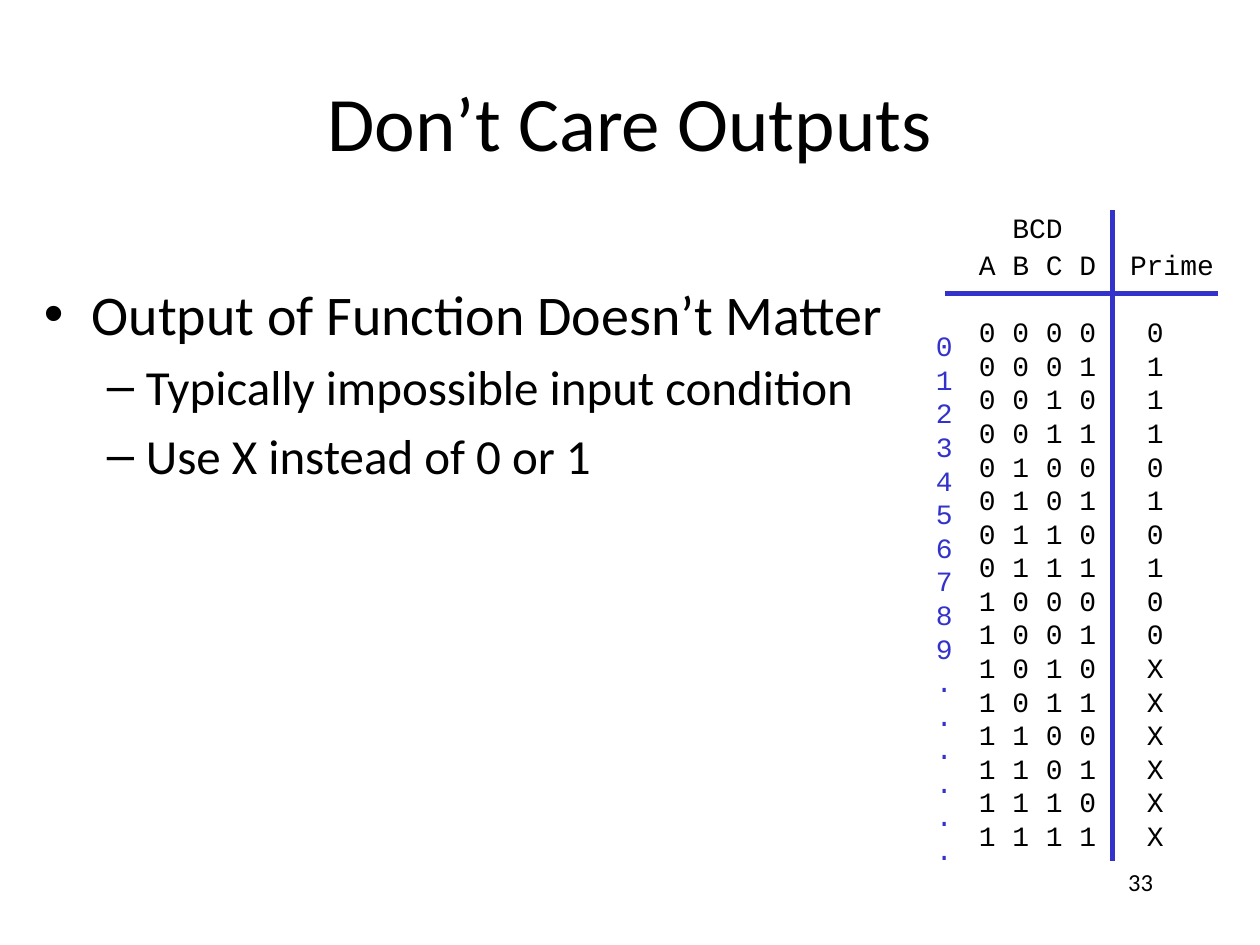
from lxml import etree
from pptx import Presentation
from pptx.dml.color import RGBColor
from pptx.enum.shapes import MSO_CONNECTOR
from pptx.enum.text import MSO_ANCHOR, PP_ALIGN
from pptx.oxml.ns import qn
from pptx.util import Inches, Pt

STRAIGHT = MSO_CONNECTOR.STRAIGHT
MIDDLE, TOP = MSO_ANCHOR.MIDDLE, MSO_ANCHOR.TOP
LEFT, CENTER, RIGHT = PP_ALIGN.LEFT, PP_ALIGN.CENTER, PP_ALIGN.RIGHT
BLACK, BLUE = "000000", "3333CC"

TITLE = "Don’t Care Outputs"
BULLETS = [
    ("Output of Function Doesn’t Matter", 0),
    ("Typically impossible input condition", 1),
    ("Use X instead of 0 or 1", 1),
]
BULLET_LEVELS = [
    {"symbol": "•", "size": 32, "margin": 0.38, "hanging": 0.38},
    {"symbol": "–", "size": 28, "margin": 0.81, "hanging": 0.31},
]
PRIME_OUTPUTS = "0111010100XXXXXX"
ROW_LABELS = "0123456789......"
SLIDE_NUMBER = "33"
RULES = [(8.83, 1.67, 8.83, 6.83), (7.5, 2.33, 9.67, 2.33)]

CHARACTER_WIDTH = 9.6 / 72
ROW_HEIGHT = 19.2
GROUP_COLUMN, HEADING_COLUMN, VALUE_COLUMN = 2, 9, 10
MONO = {"size": 16, "font": "Courier New", "line_spacing": Pt(ROW_HEIGHT)}


def color(value):
    return RGBColor.from_string(value)


def add_text_frame(slide, left, top, width, height, anchor=TOP, **margins):
    box = slide.shapes.add_textbox(Inches(left), Inches(top), Inches(width), Inches(height))
    frame = box.text_frame
    frame.word_wrap = True
    frame.vertical_anchor = anchor
    for name, margin in margins.items():
        setattr(frame, name, Inches(margin))
    return frame


def add_paragraph(frame, text, size, font="Calibri", fill=BLACK, **formats):
    first = frame.paragraphs[0]
    paragraph = frame.add_paragraph() if first.runs else first
    run = paragraph.add_run()
    run.text = text
    for name, value in {"name": font, "size": Pt(size)}.items():
        setattr(run.font, name, value)
    run.font.color.rgb = color(fill)
    for name, value in formats.items():
        setattr(paragraph, name, value)
    return paragraph


def set_bullet(paragraph, level):
    properties = paragraph._p.get_or_add_pPr()
    properties.set("marL", str(Inches(level["margin"])))
    properties.set("indent", str(-Inches(level["hanging"])))
    etree.SubElement(properties, qn("a:buFont"), typeface="Arial")
    etree.SubElement(properties, qn("a:buChar"), char=level["symbol"])


def set_tab(paragraph, column):
    tabs = etree.SubElement(paragraph._p.get_or_add_pPr(), qn("a:tabLst"))
    position = Inches(column * CHARACTER_WIDTH)
    etree.SubElement(tabs, qn("a:tab"), pos=str(position), algn="l")


def add_rule(slide, ends):
    rule = slide.shapes.add_connector(STRAIGHT, *[Inches(value) for value in ends])
    rule.line.color.rgb = color(BLUE)
    rule.line.width = Pt(3)
    etree.SubElement(rule._element.spPr, qn("a:effectLst"))


def add_truth_table(slide):
    frame = add_text_frame(slide, 7.67, 1.67, 2.92, 5.15, margin_top=0)
    rows = [("\tBCD", GROUP_COLUMN, 0), ("A B C D\tPrime", HEADING_COLUMN, 2)]
    for number, output in enumerate(PRIME_OUTPUTS):
        inputs = " ".join(f"{number:04b}")
        gap = 0 if number else ROW_HEIGHT
        rows.append((f"{inputs}\t{output}", VALUE_COLUMN, gap))
    for text, column, gap in rows:
        paragraph = add_paragraph(frame, text, alignment=LEFT, space_before=Pt(gap), **MONO)
        set_tab(paragraph, column)


def main():
    presentation = Presentation()
    presentation.slide_width = Inches(10)
    presentation.slide_height = Inches(7.5)
    slide = presentation.slides.add_slide(presentation.slide_layouts[6])

    title = add_text_frame(slide, 0.75, 0.33, 8.5, 1.25, anchor=MIDDLE)
    add_paragraph(title, TITLE, 44, alignment=CENTER)

    body = add_text_frame(slide, 0.25, 2.17, 8.5, 4.5)
    for text, depth in BULLETS:
        level = BULLET_LEVELS[depth]
        gap = Pt(level["size"] * 0.2)
        paragraph = add_paragraph(body, text, level["size"], level=depth, space_before=gap)
        set_bullet(paragraph, level)

    add_truth_table(slide)
    for ends in RULES:
        add_rule(slide, ends)

    labels = add_text_frame(slide, 7.33, 2, 0.33, 5.1, margin_top=0.61, margin_right=0)
    for label in ROW_LABELS:
        add_paragraph(labels, label, fill=BLUE, **MONO)

    footer = add_text_frame(slide, 7.17, 6.83, 2.08, 0.5)
    add_paragraph(footer, SLIDE_NUMBER, 14, alignment=RIGHT)

    presentation.save("out.pptx")


if __name__ == "__main__":
    main()
